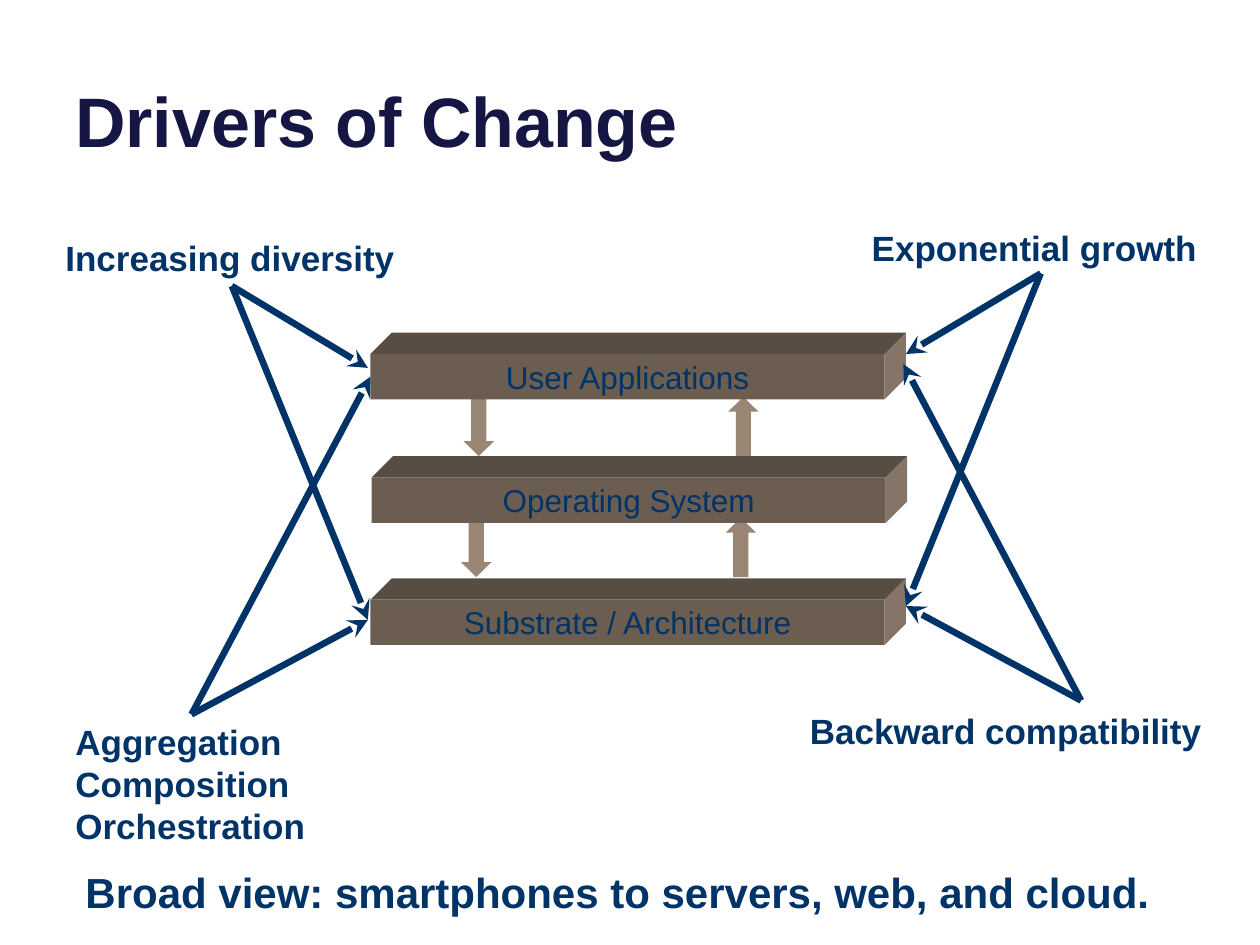
from lxml.etree import SubElement
from pptx import Presentation
from pptx.dml.color import RGBColor
from pptx.enum.shapes import MSO_CONNECTOR, MSO_SHAPE
from pptx.enum.text import MSO_ANCHOR, PP_ALIGN
from pptx.oxml.ns import qn
from pptx.util import Inches, Pt

NAVY = RGBColor(0x00, 0x33, 0x67)
TITLE_COLOR = RGBColor(0x16, 0x16, 0x45)
TAN = RGBColor(0x99, 0x86, 0x74)
FRONT = RGBColor(0x6B, 0x5D, 0x4F)
TOP = RGBColor(0x57, 0x4D, 0x43)
SIDE = RGBColor(0x86, 0x74, 0x66)

BAR_WIDTH, BAR_HEIGHT, DEPTH = 4.08, 0.36, 0.17
ARROW_WIDTH, ARROW_HEIGHT = 0.24, 0.47

LAYERS = [
    ("User Applications", 2.94, 2.81),
    ("Operating System", 2.95, 3.79),
    ("Substrate / Architecture", 2.94, 4.76),
]
FLOWS = [(3.68, 5.78, 3.15), (3.66, 5.76, 4.11)]
DRIVERS = [
    (["Aggregation", "Composition", "Orchestration"], 0.5, 5.67, 2.04, 1.11),
    (["Exponential growth"], 6.82, 1.75, 2.8, 0.44),
    (["Increasing diversity"], 0.42, 1.83, 2.85, 0.44),
    (["Backward compatibility"], 6.33, 5.58, 3.34, 0.44),
]
INFLUENCES = [
    ((1.52, 5.67), [(2.92, 4.92), (2.94, 2.99)]),
    ((1.84, 2.27), [(2.92, 2.92), (2.92, 4.92)]),
    ((8.58, 5.56), [(7.19, 4.81), (7.17, 2.89)]),
    ((8.26, 2.17), [(7.19, 2.81), (7.19, 4.81)]),
]

presentation = Presentation()
presentation.slide_width = Inches(10)
presentation.slide_height = Inches(7.5)
slide = presentation.slides.add_slide(presentation.slide_layouts[6])
shapes = slide.shapes


def write_text(shape, lines, size=20, color=NAVY, bold=True, align=PP_ALIGN.LEFT,
               anchor=MSO_ANCHOR.TOP, wrap=False):
    frame = shape.text_frame
    frame.word_wrap = wrap
    frame.vertical_anchor = anchor
    for index, line in enumerate(lines):
        paragraph = frame.add_paragraph() if index else frame.paragraphs[0]
        paragraph.alignment = align
        run = paragraph.add_run()
        run.text = line
        run.font.name = "Arial"
        run.font.size = Pt(size)
        run.font.bold = bold
        run.font.color.rgb = color


def add_text(lines, left, top, width, height, **text_format):
    box = shapes.add_textbox(Inches(left), Inches(top), Inches(width), Inches(height))
    write_text(box, lines, **text_format)


def paint(shape, color):
    shape.shadow.inherit = False
    shape.fill.solid()
    shape.fill.fore_color.rgb = color
    shape.line.fill.background()


def add_preset(kind, left, top, width, height, color):
    shape = shapes.add_shape(kind, Inches(left), Inches(top), Inches(width), Inches(height))
    paint(shape, color)
    return shape


def add_face(points, color):
    start, *others = [(Inches(x), Inches(y)) for x, y in points]
    builder = shapes.build_freeform(*start, scale=1.0)
    builder.add_line_segments(others, close=True)
    paint(builder.convert_to_shape(), color)


def add_bar(label, left, top):
    right, bottom = left + BAR_WIDTH, top + BAR_HEIGHT
    back_right, back_top = right + DEPTH, top - DEPTH
    add_face([(left, top), (left + DEPTH, back_top), (back_right, back_top), (right, top)], TOP)
    add_face([(right, top), (back_right, back_top), (back_right, bottom - DEPTH),
              (right, bottom)], SIDE)
    front = add_preset(MSO_SHAPE.RECTANGLE, left, top, BAR_WIDTH, BAR_HEIGHT, FRONT)
    write_text(front, [label], size=18, bold=False, align=PP_ALIGN.CENTER,
               anchor=MSO_ANCHOR.MIDDLE)


def add_influence(target, source):
    line = shapes.add_connector(MSO_CONNECTOR.STRAIGHT, *map(Inches, target + source))
    line.line.color.rgb = NAVY
    line.line.width = Pt(3.75)
    SubElement(line.line._get_or_add_ln(), qn("a:headEnd"), type="stealth")
    SubElement(line._element.spPr, qn("a:effectLst"))


for down_left, up_left, top in FLOWS:
    for kind, left in ((MSO_SHAPE.DOWN_ARROW, down_left), (MSO_SHAPE.UP_ARROW, up_left)):
        arrow = add_preset(kind, left, top, ARROW_WIDTH, ARROW_HEIGHT, TAN)
        arrow.adjustments[1] = 0.49

for layer in LAYERS:
    add_bar(*layer)

for driver in DRIVERS:
    add_text(*driver)

for source, targets in INFLUENCES:
    for target in targets:
        add_influence(target, source)

add_text(["Drivers of Change"], 0.5, -0.37, 9, 1.7, size=40, color=TITLE_COLOR,
         anchor=MSO_ANCHOR.BOTTOM, wrap=True)
add_text(["Broad view: smartphones to servers, web, and cloud."], 0.58, 6.83, 9.5, 0.51,
         size=24, wrap=True)

presentation.save("out.pptx")
